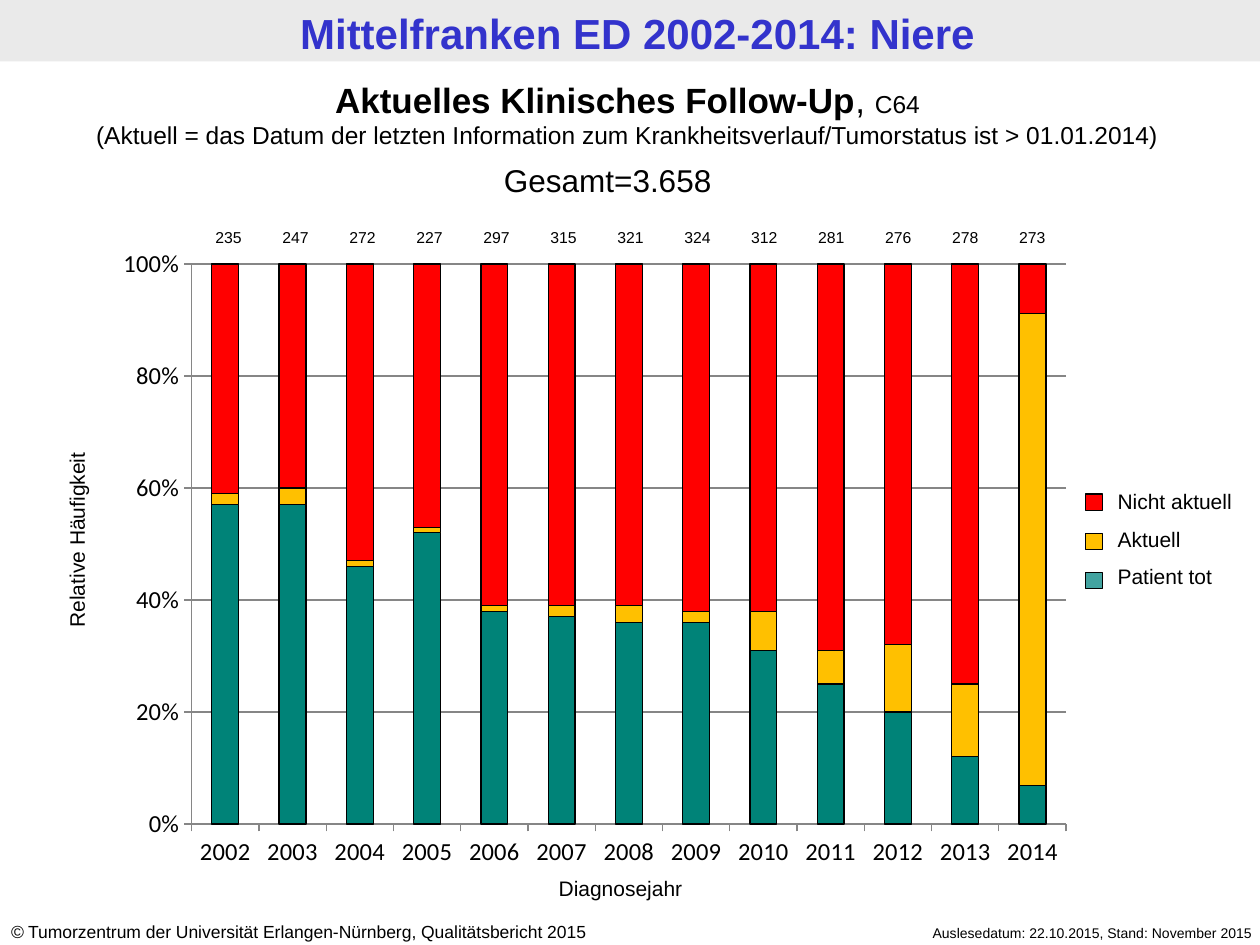
import pptx
import pptx.chart.data
import pptx.dml.color
import pptx.enum.chart
import pptx.enum.shapes
import pptx.enum.text
import pptx.oxml
import pptx.oxml.ns
import pptx.util
from lxml import etree

Cm, Pt = pptx.util.Cm, pptx.util.Pt
ALIGN = pptx.enum.text.PP_ALIGN
LEFT, CENTER, RIGHT = ALIGN.LEFT, ALIGN.CENTER, ALIGN.RIGHT

THEME = {
    "font": "Arial", "chart_font": "Calibri",
    "title": 24, "heading": 20, "total": 18, "note": 14, "axis": 14,
    "label": 12, "copyright": 10, "count": 9, "date": 8,
    "blue": "3333CC", "black": "000000", "band": "EAEAEA", "grid": "868686",
    "teal": "008378", "teal_key": "008380", "amber": "FFC000", "red": "FF0000",
}

# Spans are (text, size, style), the style being "bold", "italic" or "".
TITLE = [[("Mittelfranken ED 2002-2014: Niere", "title", "bold")]]
HEADING = [
    [("Aktuelles Klinisches Follow-Up", "heading", "bold"), (", ", "heading", ""),
     ("C64", "note", "")],
    [("(Aktuell = das Datum der letzten Information zum "
      "Krankheitsverlauf/Tumorstatus ist > 01.01.2014)", "note", "")],
]
COPYRIGHT = [[
    ("©", "copyright", "italic"),
    (" Tumorzentrum der Universität Erlangen-Nürnberg, Qualitätsbericht 2015",
     "copyright", ""),
]]
DATE = [[("Auslesedatum: 22.10.2015, Stand: November 2015", "date", "")]]
TOTAL = [[("Gesamt=3.658", "total", "")]]
YEARS = [str(year) for year in range(2002, 2015)]
COUNTS = [235, 247, 272, 227, 297, 315, 321, 324, 312, 281, 276, 278, 273]
SERIES = [
    ("Patient tot", "teal", [57, 57, 46, 52, 38, 37, 36, 36, 31, 25, 20, 12, 7]),
    ("Aktuell", "amber", [2, 3, 1, 1, 1, 2, 3, 2, 7, 6, 12, 13, 85]),
    ("Nicht aktuell", "red", [41, 40, 53, 47, 61, 61, 61, 62, 62, 69, 68, 75, 9]),
]
LEGEND = [("Nicht aktuell", "red", 100), ("Aktuell", "amber", 100),
          ("Patient tot", "teal_key", 74)]

# Left, top, width, height in cm
CHART_AREA = (2.08, 4.75, 19.81, 12.98)
PLOT_SHARE = {"x": 0.09, "y": 0.044, "w": 0.89, "h": 0.87}
COUNT_LEFT, COUNT_PITCH = 3.91, 1.35
KEY_LEFT, KEY_TOP, KEY_PITCH, KEY_SIZE = 21.89, 9.96, 0.79, 0.33


def color(name):
    return pptx.dml.color.RGBColor.from_string(THEME[name])


def area(box):
    return [Cm(length) for length in box]


def write(frame, paragraphs, align, ink="black", gap=0):
    frame.word_wrap = True
    frame.auto_size = pptx.enum.text.MSO_AUTO_SIZE.NONE
    frame.vertical_anchor = pptx.enum.text.MSO_ANCHOR.TOP
    for index, spans in enumerate(paragraphs):
        para = frame.add_paragraph() if index else frame.paragraphs[0]
        para.alignment = align
        para.space_before = Pt(gap if index else 0)
        for text, size, style in spans:
            span = para.add_run()
            span.text = text
            font = span.font
            font.name, font.size = THEME["font"], Pt(THEME[size])
            font.bold, font.italic = style == "bold", style == "italic"
            font.color.rgb = color(ink)


def add_text(page, box, paragraphs, align=LEFT, gap=0):
    text_box = page.shapes.add_textbox(*area(box))
    write(text_box.text_frame, paragraphs, align, gap=gap)
    return text_box


def outline(line, ink="black"):
    line.color.rgb = color(ink)
    line.width = Pt(0.75)


def add_rectangle(page, box, fill, opacity=100):
    shape = page.shapes.add_shape(
        pptx.enum.shapes.MSO_SHAPE.RECTANGLE, *area(box))
    shape.shadow.inherit = False
    shape.fill.solid()
    shape.fill.fore_color.rgb = color(fill)
    if opacity < 100:
        tone = shape.element.spPr.find(".//" + pptx.oxml.ns.qn("a:srgbClr"))
        alpha = etree.SubElement(tone, pptx.oxml.ns.qn("a:alpha"))
        alpha.set("val", str(opacity * 1000))
    return shape


def fix_plot_area(chart):
    """Pin the inner plot area to fixed shares of the chart."""
    plot_area = chart.element.find(".//" + pptx.oxml.ns.qn("c:plotArea"))
    for old in plot_area.findall(pptx.oxml.ns.qn("c:layout")):
        plot_area.remove(old)
    places = "".join(f'<c:{side}Mode val="edge"/>' for side in "xy")
    places += "".join(f'<c:{key} val="{share}"/>' for key, share in PLOT_SHARE.items())
    plot_area.insert(0, pptx.oxml.parse_xml(
        f'<c:layout {pptx.oxml.ns.nsdecls("c")}><c:manualLayout>'
        f'<c:layoutTarget val="inner"/>{places}</c:manualLayout></c:layout>'))


def add_follow_up_chart(page):
    data = pptx.chart.data.CategoryChartData()
    data.categories = YEARS
    for name, _, values in SERIES:
        data.add_series(name, values)
    chart = page.shapes.add_chart(
        pptx.enum.chart.XL_CHART_TYPE.COLUMN_STACKED_100,
        *area(CHART_AREA), data).chart
    chart.has_legend = chart.has_title = False
    chart.font.name, chart.font.size = THEME["chart_font"], Pt(THEME["axis"])
    chart.font.color.rgb = color("black")
    plot = chart.plots[0]
    plot.gap_width, plot.overlap, plot.vary_by_categories = 150, 100, False
    for series, (_, fill, _) in zip(plot.series, SERIES):
        series.format.fill.solid()
        series.format.fill.fore_color.rgb = color(fill)
        outline(series.format.line)
    for axis in (chart.category_axis, chart.value_axis):
        axis.major_tick_mark = pptx.enum.chart.XL_TICK_MARK.OUTSIDE
        axis.tick_labels.font.size = Pt(THEME["axis"])
        outline(axis.format.line, "grid")
    value_axis = chart.value_axis
    value_axis.minimum_scale, value_axis.maximum_scale = 0, 1
    value_axis.major_unit = 0.2
    value_axis.has_major_gridlines = True
    outline(value_axis.major_gridlines.format.line, "grid")
    value_axis.tick_labels.number_format = "0%"
    value_axis.tick_labels.number_format_is_linked = False
    fix_plot_area(chart)


def add_legend(page):
    names = [[(name, "label", "")] for name, _, _ in LEGEND]
    add_text(page, (22.28, 9.73, 3.61, 2.31), names, gap=7)
    for row, (_, fill, opacity) in enumerate(LEGEND):
        top = KEY_TOP + row * KEY_PITCH
        key = add_rectangle(page, (KEY_LEFT, top, KEY_SIZE, KEY_SIZE), fill, opacity)
        outline(key.line)


def main():
    deck = pptx.Presentation()
    deck.slide_width, deck.slide_height = Cm(25.4), Cm(19.05)
    page = deck.slides.add_slide(deck.slide_layouts[5])

    title = page.shapes.title
    title.left, title.top, title.width, title.height = area((0.15, 0.03, 25.4, 1.24))
    write(title.text_frame, TITLE, CENTER, "blue")
    band = add_rectangle(page, (0, 0, 25.4, 1.24), "band")
    band.line.fill.background()
    title.element.addprevious(band.element)

    add_text(page, (16.89, 18.52, 8.61, 0.61), DATE, RIGHT)
    add_text(page, (-0.03, 18.44, 13.31, 0.69), COPYRIGHT)
    add_follow_up_chart(page)
    value_title = add_text(page, (-1.5, 10.49, 6.12, 0.79),
                           [[("Relative Häufigkeit", "label", "")]], CENTER)
    value_title.rotation = 270
    add_text(page, (9.65, 17.53, 5.72, 0.79), [[("Diagnosejahr", "label", "")]], CENTER)
    for column, count in enumerate(COUNTS):
        left = COUNT_LEFT + column * COUNT_PITCH
        add_text(page, (left, 4.47, 1.4, 0.64), [[(str(count), "count", "")]], CENTER)
    add_legend(page)
    add_text(page, (-0.1, 1.45, 25.5, 1.7), HEADING, CENTER)
    add_text(page, (9.91, 3.12, 5.59, 1.02), TOTAL)

    deck.save("out.pptx")


if __name__ == "__main__":
    main()
